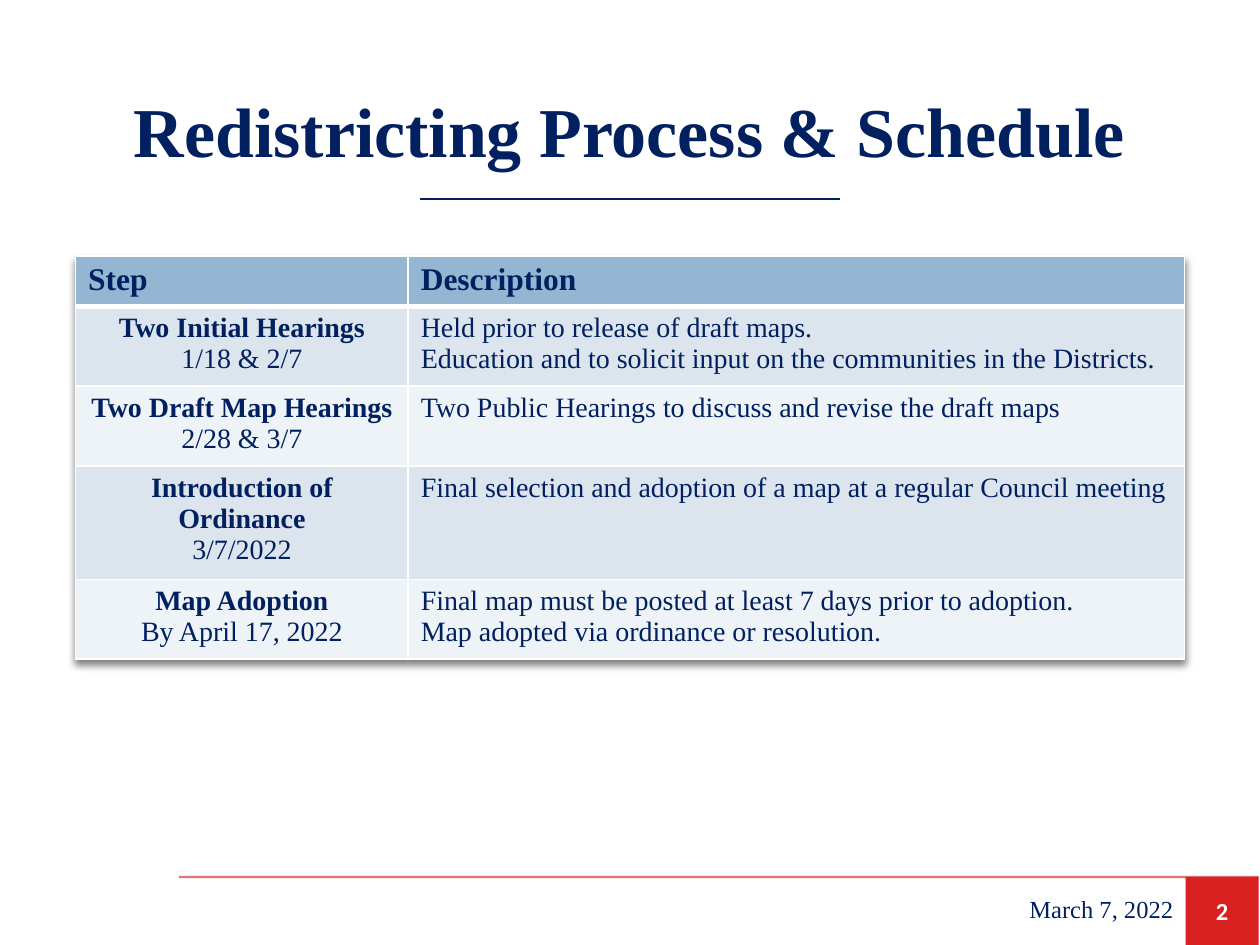
from lxml import etree
from pptx import Presentation
from pptx.dml.color import RGBColor
from pptx.enum.shapes import MSO_CONNECTOR as Connector, MSO_SHAPE as Shape
from pptx.enum.text import MSO_ANCHOR as Anchor, PP_ALIGN as Align
from pptx.oxml import parse_xml
from pptx.oxml.ns import nsdecls, qn
from pptx.util import Inches, Pt

WIDTH, HEIGHT = 10, 7.5
SERIF, SANS = "Times New Roman", "Calibri"
NAVY, RED, LINE_RED, WHITE = "002060", "D92121", "C80000", "FFFFFF"
HEADER_BLUE, BANDS = "94B6D2", ("DCE5EE", "EEF3F7")

HEADINGS = ("Step", "Description")
STEPS = [
    ("Two Initial Hearings", "1/18 & 2/7",
     ["Held prior to release of draft maps.",
      "Education and to solicit input on the communities in the Districts."]),
    ("Two Draft Map Hearings", "2/28 & 3/7",
     ["Two Public Hearings to discuss and revise the draft maps"]),
    ("Introduction of Ordinance", "3/7/2022",
     ["Final selection and adoption of a map at a regular Council meeting"]),
    ("Map Adoption", "By April 17, 2022",
     ["Final map must be posted at least 7 days prior to adoption.",
      "Map adopted via ordinance or resolution."]),
]
ROW_HEIGHTS = (0.4, 0.6, 0.6, 0.84, 0.6)
STEP_SHARE = 0.3


def color(value):
    return RGBColor.from_string(value)


def box_lengths(box):
    return [Inches(length) for length in box]


def write(frame, lines, size, align=Align.LEFT, font=SERIF, ink=NAVY):
    """Fill a text frame with (text, bold) lines."""
    frame.word_wrap = True
    for index, (text, bold) in enumerate(lines):
        paragraph = frame.add_paragraph() if index else frame.paragraphs[0]
        paragraph.alignment = align
        run = paragraph.add_run()
        run.text = text
        run.font.name, run.font.size, run.font.bold = font, Pt(size), bold
        run.font.color.rgb = color(ink)


def add_text(slide, box, text, size, align, bold=False):
    frame = slide.shapes.add_textbox(*box_lengths(box)).text_frame
    frame.vertical_anchor = Anchor.MIDDLE
    write(frame, [(text, bold)], size, align)


def add_rule(slide, left, right, y, ink, width):
    rule = slide.shapes.add_connector(
        Connector.STRAIGHT, *box_lengths((left, y, right, y)))
    rule.line.color.rgb = color(ink)
    rule.line.width = Pt(width)
    etree.SubElement(rule._element.spPr, qn("a:effectLst"))
    return rule


def add_title(slide, box):
    left, top, width, height = box
    add_text(slide, box, "Redistricting Process & Schedule", 40, Align.CENTER, True)
    # Centred rule one third of the slide wide
    start = (WIDTH - WIDTH / 3) / 2
    add_rule(slide, start, start + WIDTH / 3, top + height + 0.01, NAVY, 0.75)


def style_cell(cell, fill, bottom_width):
    properties = cell._tc.get_or_add_tcPr()
    for side in "LRTB":
        width = Pt(bottom_width if side == "B" else 1)
        properties.append(parse_xml(
            f'<a:ln{side} {nsdecls("a")} w="{width}"><a:solidFill>'
            f'<a:srgbClr val="{WHITE}"/></a:solidFill></a:ln{side}>'))
    cell.fill.solid()
    cell.fill.fore_color.rgb = color(fill)


def add_schedule(slide, box):
    left, top, width, height = box
    table = slide.shapes.add_table(len(STEPS) + 1, 2, *box_lengths(box)).table
    table.columns[0].width = Inches(width * STEP_SHARE)
    table.columns[1].width = Inches(width * (1 - STEP_SHARE))
    for row, row_height in zip(table.rows, ROW_HEIGHTS):
        row.height = Inches(row_height)

    # Soft shadow below the table
    table._tbl.tblPr.insert(0, parse_xml(
        f'<a:effectLst {nsdecls("a")}><a:outerShdw blurRad="50800" dist="38100" '
        'dir="5400000" algn="t" rotWithShape="0"><a:srgbClr val="000000">'
        '<a:alpha val="50000"/></a:srgbClr></a:outerShdw></a:effectLst>'))

    # Header row
    for column, heading in enumerate(HEADINGS):
        cell = table.cell(0, column)
        style_cell(cell, HEADER_BLUE, 3)
        write(cell.text_frame, [(heading, True)], 18)

    # Banded step rows
    for index, (step, date, description) in enumerate(STEPS):
        step_cell, description_cell = table.rows[index + 1].cells
        for cell in (step_cell, description_cell):
            style_cell(cell, BANDS[index % 2], 1)
        write(step_cell.text_frame, [(step, True), (date, False)], 16, Align.CENTER)
        write(description_cell.text_frame,
              [(line, False) for line in description], 16)


def add_footer(slide, box):
    left, top, width, height = box
    right, badge_width, date_width = left + width, 0.58, 2.92
    # Translucent rule
    rule = add_rule(slide, left, right, top, LINE_RED, 1.25)
    tint = rule._element.spPr.find(".//" + qn("a:srgbClr"))
    etree.SubElement(tint, qn("a:alpha")).set("val", "55000")

    # Page number
    badge_left = right - badge_width
    badge = slide.shapes.add_shape(
        Shape.RECTANGLE, *box_lengths((badge_left, top, badge_width, height)))
    badge.shadow.inherit = False
    badge.fill.solid()
    badge.fill.fore_color.rgb = color(RED)
    badge.line.fill.background()
    badge.text_frame.vertical_anchor = Anchor.MIDDLE
    write(badge.text_frame, [("2", True)], 14, Align.CENTER, SANS, WHITE)

    # Date
    add_text(slide, (badge_left - date_width, top + 0.05, date_width, 0.4),
             "March 7, 2022", 14, Align.RIGHT)


def main():
    presentation = Presentation()
    presentation.slide_width, presentation.slide_height = Inches(WIDTH), Inches(HEIGHT)
    slide = presentation.slides.add_slide(presentation.slide_layouts[6])
    add_footer(slide, (1.42, 6.96, 8.57, HEIGHT - 6.96))
    add_title(slide, (0.37, 0.49, 9.25, 1.08))
    add_schedule(slide, (0.6, 2.03, 0.88 * WIDTH, sum(ROW_HEIGHTS)))
    presentation.save("out.pptx")


if __name__ == "__main__":
    main()
